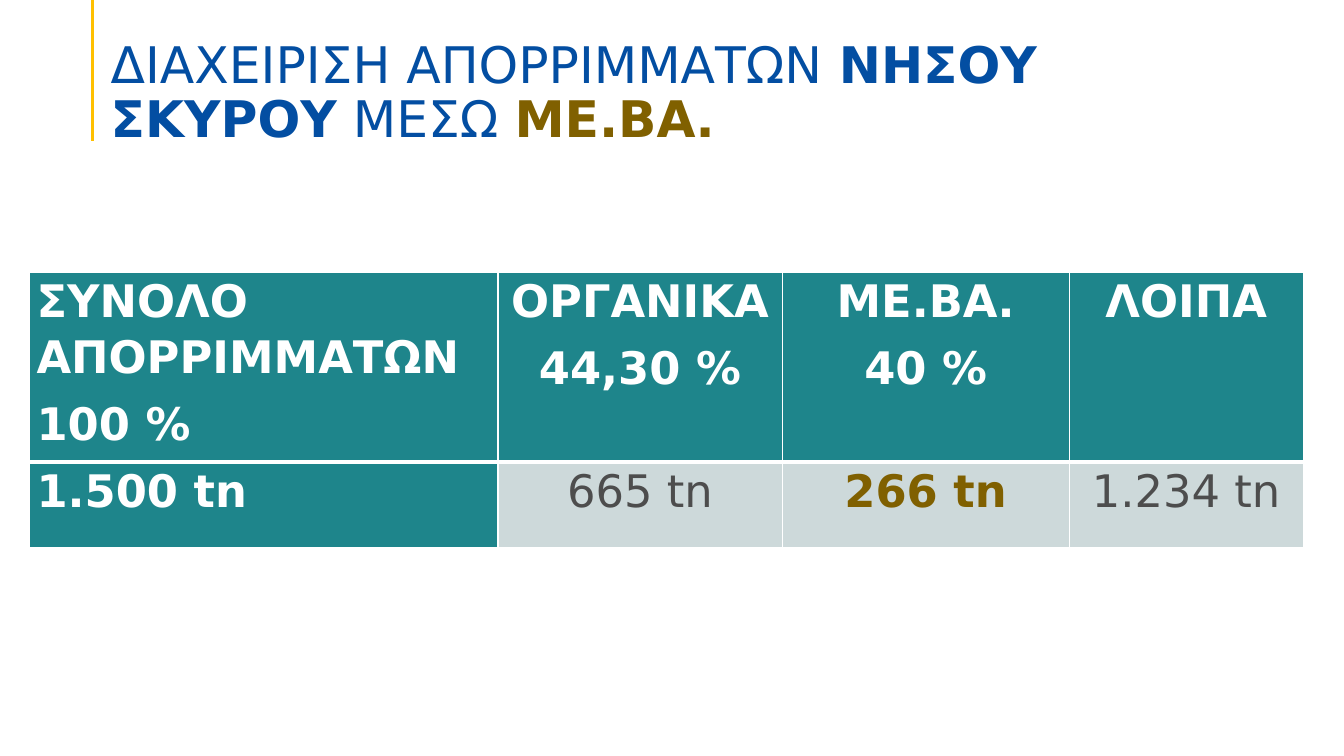
from lxml import etree
from pptx import Presentation, util as u
from pptx.dml.color import RGBColor
from pptx.enum import shapes, text
from pptx.oxml.ns import qn

FONT = "DejaVu Sans"
COLORS = {"blue": "034EA2", "gold": "806000", "amber": "FFC000", "teal": "1E858B",
          "pale": "CDD9DA", "gray": "4D4D4D", "white": "FFFFFF"}

TITLE = [("ΔΙΑΧΕΙΡΙΣΗ ΑΠΟΡΡΙΜΜΑΤΩΝ ", "blue", False), ("ΝΗΣΟΥ ΣΚΥΡΟΥ", "blue", True),
         (" ΜΕΣΩ ", "blue", False), ("ΜΕ.ΒΑ.", "gold", True)]
WASTE = [
    [["ΣΥΝΟΛΟ ΑΠΟΡΡΙΜΜΑΤΩΝ", "100 %"], ["ΟΡΓΑΝΙΚΑ", "44,30 %"], ["ΜΕ.ΒΑ.", "40 %"], ["ΛΟΙΠΑ"]],
    [["1.500 tn"], ["665 tn"], ["266 tn"], ["1.234 tn"]],
]
HIGHLIGHT = (1, 2)
COLUMN_WIDTHS = [11.81, 7.16, 7.24, 5.89]
ROW_HEIGHTS = [4.78, 2.16]


def rgb(name):
    return RGBColor.from_string(COLORS[name])


def assign(target, values):
    for name, value in values.items():
        setattr(target, name, value)


def add_run(paragraph, content, size, color, bold):
    run = paragraph.add_run()
    run.text = content
    assign(run.font, {"name": FONT, "size": u.Pt(size), "bold": bold})
    run.font.color.rgb = rgb(color)


def add_border(cell, side, points):
    line = etree.SubElement(cell._tc.get_or_add_tcPr(), qn(f"a:ln{side}"), w=str(u.Pt(points)))
    fill = etree.SubElement(line, qn("a:solidFill"))
    etree.SubElement(fill, qn("a:srgbClr"), val=COLORS["white"])


def add_rule(slide):
    rule = slide.shapes.add_connector(shapes.MSO_CONNECTOR.STRAIGHT,
                                      u.Cm(2.34), u.Cm(0), u.Cm(2.34), u.Cm(3.56))
    rule.line.color.rgb = rgb("amber")
    rule.line.width = u.Pt(2.25)
    etree.SubElement(rule._element.spPr, qn("a:effectLst"))


def fill_title(title):
    assign(title, {"left": u.Cm(2.54), "top": u.Cm(0.69),
                   "width": u.Cm(27.79), "height": u.Cm(3.05)})
    assign(title.text_frame, {
        "word_wrap": True, "auto_size": text.MSO_AUTO_SIZE.NONE,
        "vertical_anchor": text.MSO_ANCHOR.BOTTOM, "margin_left": u.Cm(0.25),
        "margin_right": u.Cm(0.25), "margin_top": u.Cm(0.13), "margin_bottom": 0})
    paragraph = title.text_frame.paragraphs[0]
    assign(paragraph, {"alignment": text.PP_ALIGN.LEFT, "line_spacing": 0.9,
                       "space_before": u.Pt(0)})
    for content, color, bold in TITLE:
        add_run(paragraph, content, 36, color, bold)


def fill_cell(cell, lines, row, column):
    emphasized = row == 0 or column == 0
    highlighted = (row, column) == HIGHLIGHT
    color = "white" if emphasized else "gold" if highlighted else "gray"
    assign(cell, {"margin_left": u.Cm(0.18), "margin_right": u.Cm(0.18),
                  "margin_top": 0, "margin_bottom": 0})
    for side in "LRTB":
        heavy = (row, side) in ((0, "B"), (1, "T"))
        add_border(cell, side, 3 if heavy else 1)
    cell.fill.solid()
    cell.fill.fore_color.rgb = rgb("teal" if emphasized else "pale")
    for index, content in enumerate(lines):
        frame = cell.text_frame
        paragraph = frame.add_paragraph() if index else frame.paragraphs[0]
        assign(paragraph, {
            "alignment": text.PP_ALIGN.CENTER if column else text.PP_ALIGN.LEFT,
            "line_spacing": 1.07, "space_after": u.Pt(8)})
        add_run(paragraph, content, 32, color, emphasized or highlighted)


def add_waste_table(slide):
    table = slide.shapes.add_table(
        len(WASTE), len(COLUMN_WIDTHS), u.Cm(0.74), u.Cm(6.86),
        u.Cm(sum(COLUMN_WIDTHS)), u.Cm(sum(ROW_HEIGHTS))).table
    for column, width in zip(table.columns, COLUMN_WIDTHS):
        column.width = u.Cm(width)
    for row, height in zip(table.rows, ROW_HEIGHTS):
        row.height = u.Cm(height)
    for row, cells in enumerate(WASTE):
        for column, lines in enumerate(cells):
            fill_cell(table.cell(row, column), lines, row, column)


def main():
    presentation = Presentation()
    assign(presentation, {"slide_width": u.Cm(33.87), "slide_height": u.Cm(19.05)})
    slide = presentation.slides.add_slide(presentation.slide_layouts[5])
    add_rule(slide)
    add_waste_table(slide)
    fill_title(slide.shapes.title)
    presentation.save("out.pptx")


if __name__ == "__main__":
    main()
